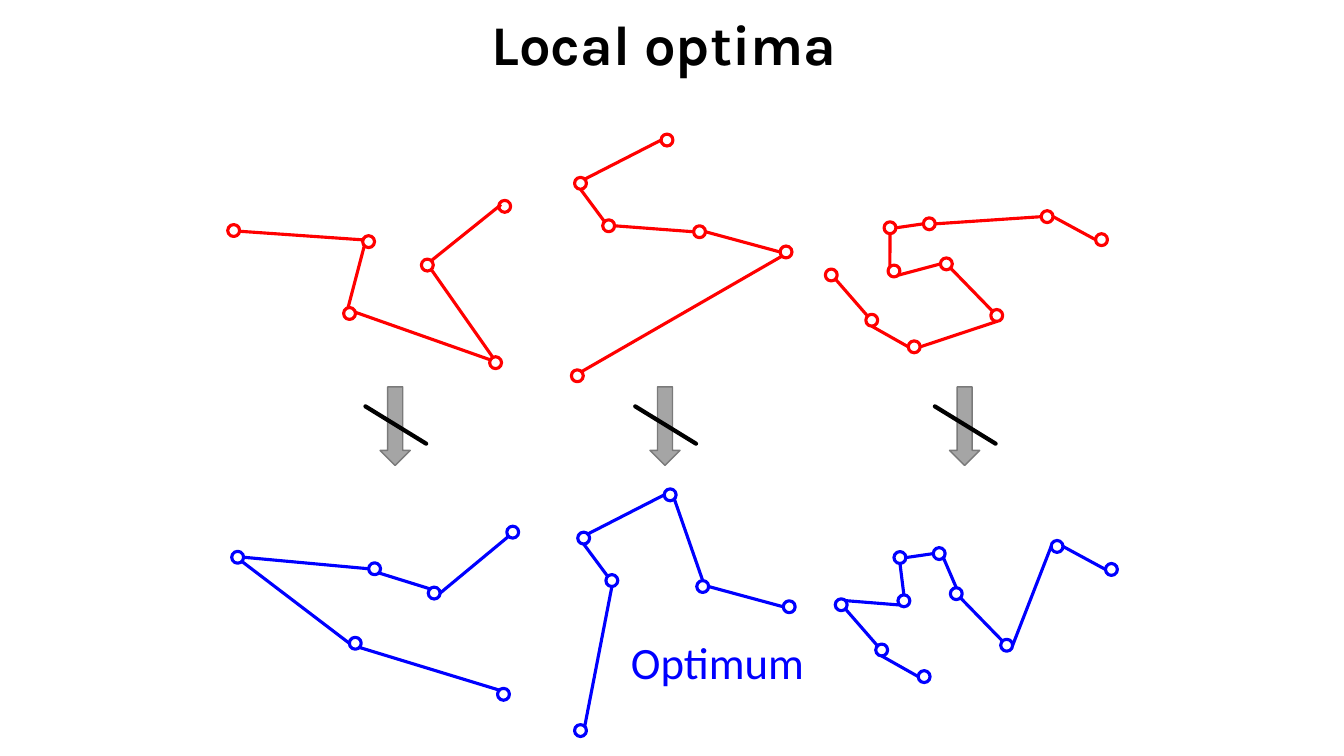
"""Slide on local optima: three tours, their optima, and blocked arrows between."""
from lxml import etree
from pptx import Presentation
from pptx import util as u
from pptx.dml.color import RGBColor
from pptx.enum import shapes, text
from pptx.oxml.ns import qn

COLORS = {"local": "FF0000", "optimum": "0000FF", "arrow": "A5A5A5",
          "arrow_edge": "7A7A7A", "black": "000000", "white": "FFFFFF"}
TITLE = "Local optima"
LABEL = "Optimum"

# Edges name a node and the compass side of its circle at each end.
TOURS = [
    {"nodes": [(5.74, 5.66), (8.66, 7.75), (9.14, 5.94), (10.62, 6.53),
               (12.57, 5.05), (12.34, 8.99)],
     "hollow": 4,
     "origin": (5.74, 5.05), "moved": (5.84, 13.26), "scale": (1.015, 1.037),
     "path": [(5.92, 5.82), (9.22, 6.05), (8.76, 7.8), (12.5, 9.12),
              (10.77, 6.65), (12.6, 5.18), (12.62, 5.21)],
     "local": "",
     "optimum": "0E-2W 2SE-3NW 3E-4SW 0SE-1W 1SE-5NW"},
    {"nodes": [(14.48, 4.47), (16.66, 3.38), (15.19, 5.54), (17.48, 5.69),
               (19.66, 6.2), (14.4, 9.32)],
     "origin": (0, 0), "moved": (0.08, 8.94), "scale": (1, 1),
     "local": "0NE-1W 0S-2NW 2E-3W 3E-4W 4SW-5NE",
     "optimum": "0NE-1W 0S-2NW 1SE-3N 3E-4W 2S-5NE"},
    {"nodes": [(20.8, 6.78), (21.82, 7.92), (22.28, 5.59), (23.27, 5.49),
               (22.89, 8.59), (24.97, 7.8), (23.7, 6.5), (22.38, 6.68),
               (26.24, 5.31), (27.61, 5.89)],
     "origin": (0, 0), "moved": (0.25, 8.31), "scale": (1, 1),
     "local": "9W-8E 8W-3E 3W-2E 2S-7NW 7SE-6W 6SE-5NW 5S-4E 4W-1S 1NW-0SE",
     "optimum": "9W-8E 8W-5E 3W-2E 3SE-6N 7N-2S 6SE-5NW 7SW-0NE 4W-1S 1NW-0SE"},
]
ARROWS_X = [9.58, 16.38, 23.93]
NODE = 0.3
SIDES = {"N": (0.5, 0), "NE": (0.85, 0.15), "E": (1, 0.5), "SE": (0.85, 0.85),
         "S": (0.5, 1), "SW": (0.15, 0.85), "W": (0, 0.5), "NW": (0.15, 0.15)}


def rgb(name):
    return RGBColor.from_string(COLORS[name])


def set_line(sp, color, width):
    sp.line.color.rgb = rgb(color)
    sp.line.width = u.Pt(width)


def add_line(s, start, end, color, width):
    c = s.shapes.add_connector(shapes.MSO_CONNECTOR.STRAIGHT,
                               *(u.Cm(v) for v in (*start, *end)))
    set_line(c, color, width)
    etree.SubElement(c._element.spPr, qn("a:effectLst"))
    return c


def add_shape(s, kind, box, fill, color, width):
    sp = s.shapes.add_shape(kind, *(u.Cm(v) for v in box))
    sp.shadow.inherit = False
    if fill:
        sp.fill.solid()
        sp.fill.fore_color.rgb = rgb(fill)
    else:
        sp.fill.background()
    set_line(sp, color, width)


def add_path(s, points, color):
    pts = [(u.Cm(x), u.Cm(y)) for x, y in points]
    fb = s.shapes.build_freeform(*pts[0])
    fb.add_line_segments(pts[1:], close=False)
    sp = fb.convert_to_shape()
    sp.shadow.inherit = False
    sp.fill.background()
    set_line(sp, color, 2.25)


def edge_end(nodes, end):
    x, y = nodes[int(end[0])]
    dx, dy = SIDES[end[1:]]
    return x + NODE * dx, y + NODE * dy


def add_tour(s, nodes, edges, color, hollow):
    for i, (x, y) in enumerate(nodes):
        add_shape(s, shapes.MSO_SHAPE.OVAL, (x, y, NODE, NODE),
                  None if i == hollow else "white", color, 2.25)
    for edge in edges.split():
        start, end = (edge_end(nodes, e) for e in edge.split("-"))
        add_line(s, start, end, color, 2.25)


def shift(tour):
    return [tuple(m + (v - o) * k for v, o, m, k in
                  zip(node, tour["origin"], tour["moved"], tour["scale"]))
            for node in tour["nodes"]]


def set_text(tf, words, font, size, color):
    tf.text = words
    p = tf.paragraphs[0]
    p.font.name = font
    p.font.size = u.Pt(size)
    p.font.color.rgb = rgb(color)
    return p


def main():
    prs = Presentation()
    prs.slide_width, prs.slide_height = u.Cm(33.87), u.Cm(19.05)
    s = prs.slides.add_slide(prs.slide_layouts[5])

    title = s.shapes.title
    title.left, title.top = u.Cm(3.71), u.Cm(-0.03)
    title.width, title.height = u.Cm(26.04), u.Cm(2.46)
    title.text_frame.vertical_anchor = text.MSO_ANCHOR.MIDDLE
    p = set_text(title.text_frame, TITLE, "Karla", 40, "black")
    p.font.bold = True
    p.alignment = text.PP_ALIGN.CENTER
    p.line_spacing = 0.9

    for tour in TOURS:
        if "path" in tour:
            add_path(s, tour["path"], "local")
        for color, nodes in (("local", tour["nodes"]), ("optimum", shift(tour))):
            add_tour(s, nodes, tour[color], color, tour.get("hollow"))

    for x in ARROWS_X:
        add_shape(s, shapes.MSO_SHAPE.DOWN_ARROW, (x, 9.75, 0.76, 1.98),
                  "arrow", "arrow_edge", 1)
        strike = add_line(s, (x - 0.37, 10.24), (x + 1.16, 11.18), "black", 3)
        strike._element.spPr.find(qn("a:ln")).set("cap", "rnd")

    tb = s.shapes.add_textbox(u.Cm(15.65), u.Cm(15.88), u.Cm(4.93), u.Cm(1.63))
    tf = tb.text_frame
    tf.word_wrap = False
    tf.auto_size = text.MSO_AUTO_SIZE.SHAPE_TO_FIT_TEXT
    set_text(tf, LABEL, "Calibri", 32, "optimum")

    prs.save("out.pptx")


if __name__ == "__main__":
    main()
